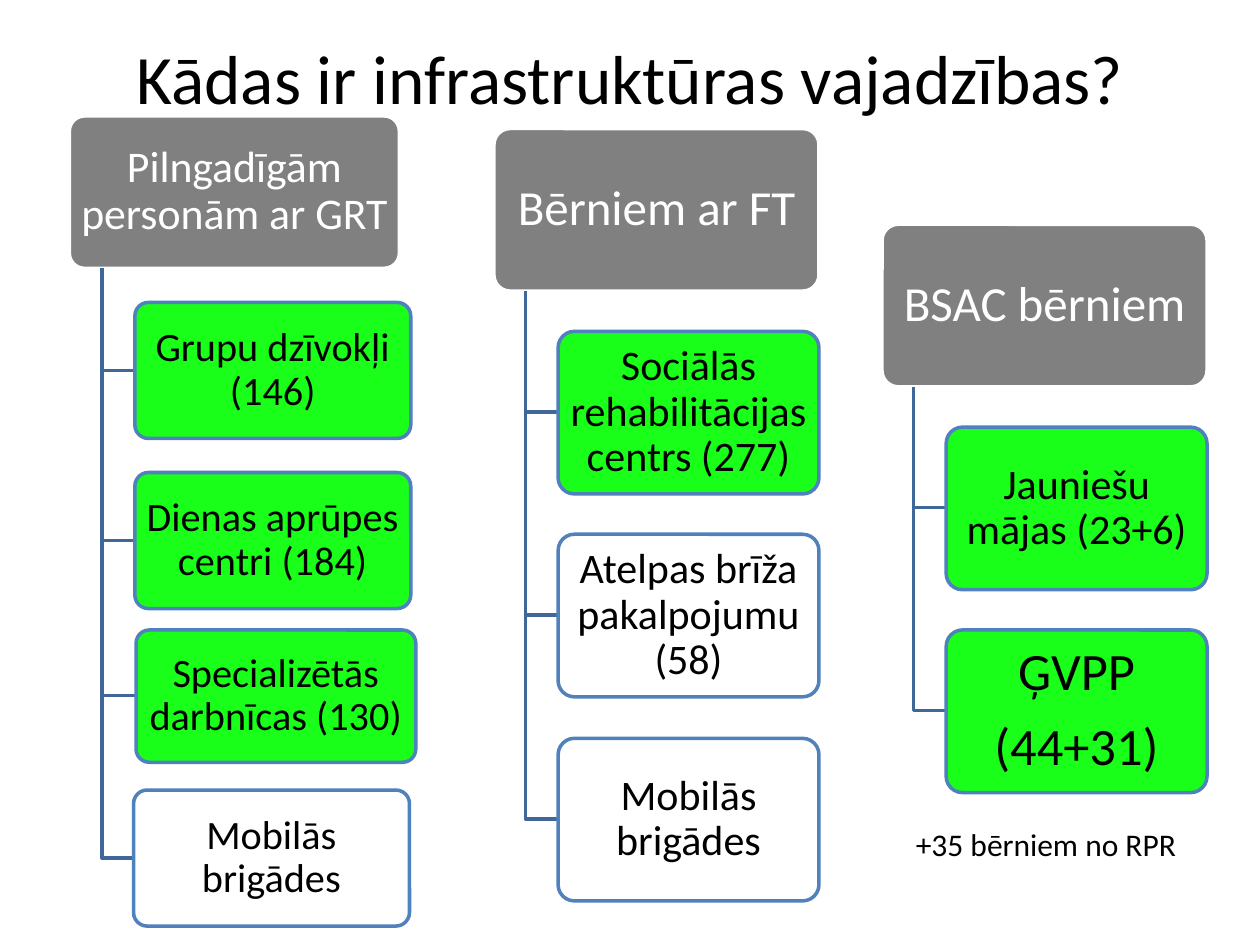
from dataclasses import dataclass

from lxml import etree
from pptx import Presentation
from pptx.dml.color import RGBColor
from pptx.enum.shapes import MSO_SHAPE
from pptx.enum.text import MSO_ANCHOR, PP_ALIGN
from pptx.oxml.ns import qn
from pptx.shapes.autoshape import Shape
from pptx.shapes.group import GroupShape
from pptx.slide import Slide
from pptx.util import Pt

PX = 9144  # 100 px to the inch
FONT = "Calibri"
ROUNDED = MSO_SHAPE.ROUNDED_RECTANGLE
CENTER, LEFT = PP_ALIGN.CENTER, PP_ALIGN.LEFT
MIDDLE, TOP = MSO_ANCHOR.MIDDLE, MSO_ANCHOR.TOP

BLACK = RGBColor(0x00, 0x00, 0x00)
WHITE = RGBColor(0xFF, 0xFF, 0xFF)
GRAY = RGBColor(0x80, 0x80, 0x80)
GREEN = RGBColor(0x00, 0xFF, 0x00)
BLUE = RGBColor(0x4F, 0x81, 0xBD)
DARK_BLUE = RGBColor(0x3F, 0x67, 0x97)


@dataclass(frozen=True)
class Card:
    left: int
    top: int
    width: int
    height: int
    lines: tuple[str, ...]
    size: int
    fill: RGBColor


@dataclass(frozen=True)
class Branch:
    header: Card
    needs: list[Card]


@dataclass(frozen=True)
class Need:
    lines: tuple[str, ...]
    fill: RGBColor
    size: int = 24


def even_branch(left: int, top: int, title: str, needs: list[Need]) -> Branch:
    """Stack equal cards below a header, a quarter of their height apart."""
    width, height = 258, 129
    step = height * 5 / 4
    return Branch(
        Card(left, top, width, height, (title,), 28, GRAY),
        [Card(left + 51, round(top + step * row), 207, height,
              need.lines, need.size, need.fill)
         for row, need in enumerate(needs, start=1)],
    )


BRANCHES = [
    Branch(
        Card(55, 92, 262, 121, ("Pilngadīgām personām ar GRT",), 25, GRAY),
        [
            Card(107, 240, 219, 108, ("Grupu dzīvokļi (146)",), 23, GREEN),
            Card(107, 375, 219, 108, ("Dienas aprūpes centri (184)",), 23, GREEN),
            Card(108, 500, 222, 105, ("Specializētās darbnīcas (130)",), 23, GREEN),
            Card(106, 627, 219, 108, ("Mobilās brigādes",), 23, WHITE),
        ],
    ),
    even_branch(392, 102, "Bērniem ar FT", [
        Need(("Sociālās rehabilitācijas centrs (277)",), GREEN),
        Need(("Atelpas brīža pakalpojumu (58)",), WHITE),
        Need(("Mobilās brigādes",), WHITE),
    ]),
    even_branch(700, 178, "BSAC bērniem", [
        Need(("Jauniešu mājas (23+6)",), GREEN),
        Need(("ĢVPP", "(44+31)"), GREEN, 30),
    ]),
]


def write_lines(shape: Shape, lines: tuple[str, ...], size: float,
                color: RGBColor, align: PP_ALIGN, anchor: MSO_ANCHOR) -> None:
    frame = shape.text_frame
    frame.word_wrap = True
    frame.vertical_anchor = anchor
    for index, line in enumerate(lines):
        para = frame.add_paragraph() if index else frame.paragraphs[0]
        para.alignment = align
        span = para.add_run()
        span.text = line
        span.font.name = FONT
        span.font.size = Pt(size)
        span.font.color.rgb = color


def set_opacity(shape: Shape, percent: int) -> None:
    color = shape.fill._xPr.find(qn("a:solidFill"))[0]
    etree.SubElement(color, qn("a:alpha"), val=str(percent * 1000))


def draw_card(group: GroupShape, card: Card, is_header: bool) -> None:
    box = group.shapes.add_shape(ROUNDED, card.left * PX, card.top * PX,
                                 card.width * PX, card.height * PX)
    box.adjustments[0] = 0.1
    box.shadow.inherit = False
    box.fill.solid()
    box.fill.fore_color.rgb = card.fill
    if not is_header:
        set_opacity(box, 90)
    box.line.color.rgb = WHITE if is_header else BLUE
    box.line.width = Pt(2)

    frame = box.text_frame
    inset = 6 if card.size >= 28 else 5
    frame.margin_left = frame.margin_right = inset * PX
    frame.margin_top = frame.margin_bottom = (inset - 2) * PX
    write_lines(box, card.lines, card.size, WHITE if is_header else BLACK,
                CENTER, MIDDLE)
    for para in frame.paragraphs:
        para.line_spacing = 0.9
        para.space_after = Pt(card.size * 0.35)


def draw_elbow(group: GroupShape, header: Card, need: Card) -> None:
    """Run a line down from the header and across to the card's left side."""
    trunk = header.left + header.width // 10
    middle = need.top + need.height // 2
    builder = group.shapes.build_freeform(
        trunk, header.top + header.height, scale=PX)
    builder.add_line_segments([(trunk, middle), (need.left, middle)], close=False)
    elbow = builder.convert_to_shape()
    elbow.shadow.inherit = False
    elbow.fill.background()
    elbow.line.color.rgb = DARK_BLUE
    elbow.line.width = Pt(2)


def draw_branch(page: Slide, branch: Branch) -> None:
    group = page.shapes.add_group_shape()
    draw_card(group, branch.header, is_header=True)
    for need in branch.needs:
        draw_elbow(group, branch.header, need)
        draw_card(group, need, is_header=False)


def main() -> None:
    deck = Presentation()
    deck.slide_width, deck.slide_height = 1000 * PX, 750 * PX
    page = deck.slides.add_slide(deck.slide_layouts[6])

    title = page.shapes.add_textbox(50 * PX, 30 * PX, 900 * PX, 62 * PX)
    write_lines(title, ("Kādas ir infrastruktūras vajadzības?",), 39.6,
                BLACK, CENTER, MIDDLE)
    for branch in BRANCHES:
        draw_branch(page, branch)
    note = page.shapes.add_textbox(717 * PX, 650 * PX, 233 * PX, 40 * PX)
    write_lines(note, ("+35 bērniem no RPR",), 18, BLACK, LEFT, TOP)

    deck.save("out.pptx")


if __name__ == "__main__":
    main()
